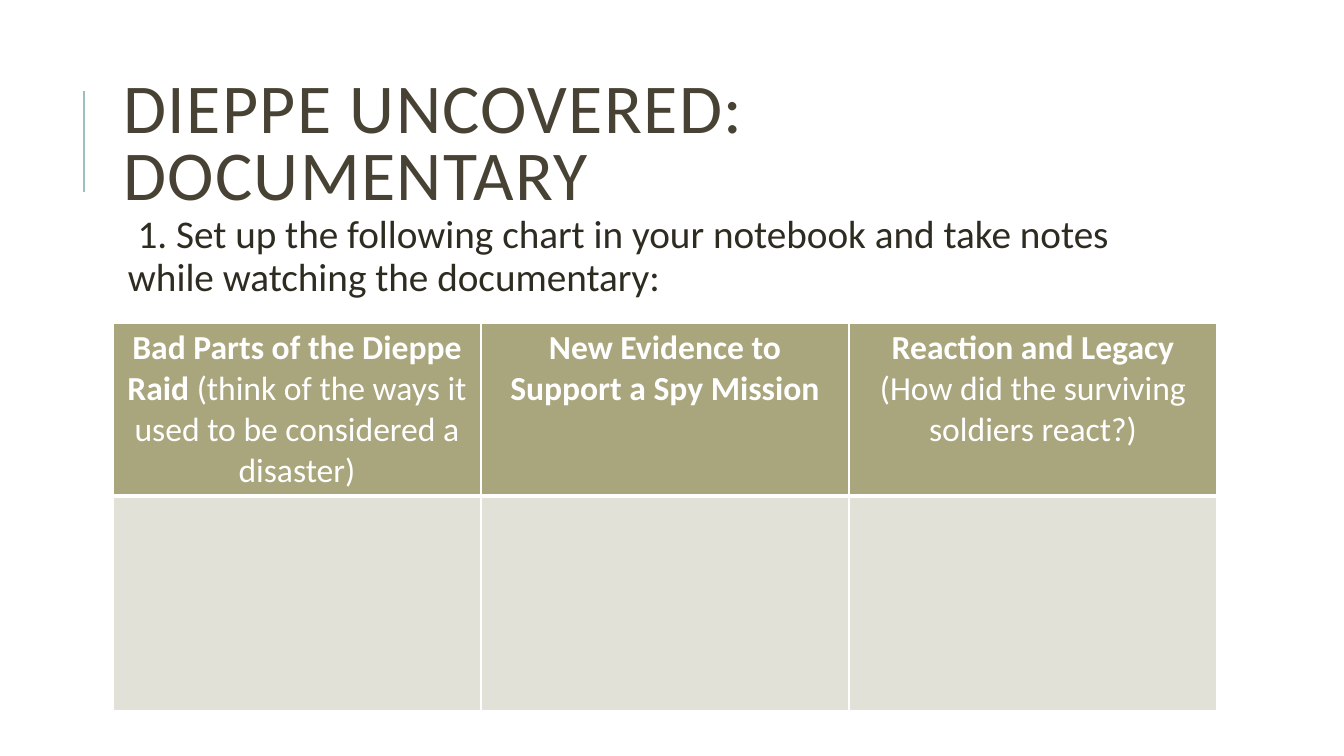
from lxml import etree
from pptx import Presentation
from pptx.dml.color import RGBColor
from pptx.enum.shapes import MSO_CONNECTOR
from pptx.enum.text import MSO_ANCHOR, MSO_AUTO_SIZE, PP_ALIGN
from pptx.oxml import parse_xml
from pptx.oxml.ns import nsdecls, qn
from pptx.util import Pt

STRAIGHT = MSO_CONNECTOR.STRAIGHT
MIDDLE = MSO_ANCHOR.MIDDLE
NO_AUTOFIT = MSO_AUTO_SIZE.NONE
LEFT, CENTER = PP_ALIGN.LEFT, PP_ALIGN.CENTER
TITLE_ONLY = 5
FONT = "Calibri"
COLORS = {
    "title": "474233",
    "body": "2E2B21",
    "accent": "9CBEBD",
    "header": "A9A57C",
    "cell": "E2E1D7",
    "white": "FFFFFF",
}


def px(length):
    return round(length * 914400 / 100.8)


def format_run(run, size, color, bold=False):
    run.font.name = FONT
    run.font.size = Pt(size)
    run.font.bold = bold
    run.font.color.rgb = RGBColor.from_string(COLORS[color])


presentation = Presentation()
presentation.slide_width = px(1344)
presentation.slide_height = px(756)
slide = presentation.slides.add_slide(presentation.slide_layouts[TITLE_ONLY])

accent_line = slide.shapes.add_connector(STRAIGHT, px(84), px(192), px(84), px(91))
accent_line.line.color.rgb = RGBColor.from_string(COLORS["accent"])
accent_line.line.width = Pt(1.5)
etree.SubElement(accent_line._element.spPr, qn("a:effectLst"))

title = slide.shapes.title
title.left, title.top, title.width, title.height = px(113), px(64), px(1072), px(165)
title.text_frame.text = "DIEPPE UNCOVERED: DOCUMENTARY"
title.text_frame.word_wrap = True
title.text_frame.auto_size = NO_AUTOFIT
title.text_frame.vertical_anchor = MIDDLE
title_paragraph = title.text_frame.paragraphs[0]
title_paragraph.alignment = LEFT
title_paragraph.line_spacing = 0.8
title_run = title_paragraph.runs[0]
format_run(title_run, 50, "title")
title_run.font._element.set("spc", "100")

instruction = slide.shapes.add_textbox(px(113), px(210), px(1072), px(108))
instruction_frame = instruction.text_frame
instruction_frame.word_wrap = True
instruction_frame.margin_left = instruction_frame.margin_right = px(5)
instruction_frame.margin_top = instruction_frame.margin_bottom = px(5)
instruction_frame.text = (
    "1. Set up the following chart in your notebook and take notes "
    "while watching the documentary:"
)
instruction_paragraph = instruction_frame.paragraphs[0]
instruction_paragraph.line_spacing = 0.9
instruction_paragraph.space_before = Pt(12)
instruction_paragraph.space_after = Pt(2)
format_run(instruction_paragraph.runs[0], 28, "body")
properties = instruction_paragraph._p.get_or_add_pPr()
properties.set("marL", str(px(10)))
properties.set("indent", str(px(-10)))
etree.SubElement(properties, qn("a:buChar")).set("char", " ")

HEADERS = [
    [[("Bad Parts of the Dieppe Raid ", True),
      ("(think of the ways it used to be considered a disaster)", False)]],
    [[("New Evidence to Support a Spy Mission", True)]],
    [[("Reaction and Legacy", True)],
     [("(How did the surviving soldiers react?)", False)]],
]
ROWS = [
    {"height": 173, "fill": "header", "borders": {"lnL": 1, "lnR": 1, "lnT": 1, "lnB": 3}},
    {"height": 215, "fill": "cell", "borders": {"lnL": 1, "lnR": 1, "lnT": 3, "lnB": 1}},
]

table_height = sum(row["height"] for row in ROWS)
table = slide.shapes.add_table(
    len(ROWS), len(HEADERS), px(113), px(323), px(1104), px(table_height)
).table
for column in table.columns:
    column.width = px(368)

for row_index, row in enumerate(ROWS):
    table.rows[row_index].height = px(row["height"])
    for cell in table.rows[row_index].cells:
        cell_properties = cell._tc.get_or_add_tcPr()
        for side, width in row["borders"].items():
            cell_properties.append(parse_xml(
                f'<a:{side} {nsdecls("a")} w="{Pt(width)}"><a:solidFill>'
                f'<a:srgbClr val="{COLORS["white"]}"/></a:solidFill></a:{side}>'
            ))
        cell.fill.solid()
        cell.fill.fore_color.rgb = RGBColor.from_string(COLORS[row["fill"]])

for column_index, header in enumerate(HEADERS):
    header_frame = table.cell(0, column_index).text_frame
    for paragraph_index, parts in enumerate(header):
        paragraph = header_frame.add_paragraph() if paragraph_index else header_frame.paragraphs[0]
        paragraph.alignment = CENTER
        for text, bold in parts:
            run = paragraph.add_run()
            run.text = text
            format_run(run, 24, "white", bold)

presentation.save("out.pptx")
